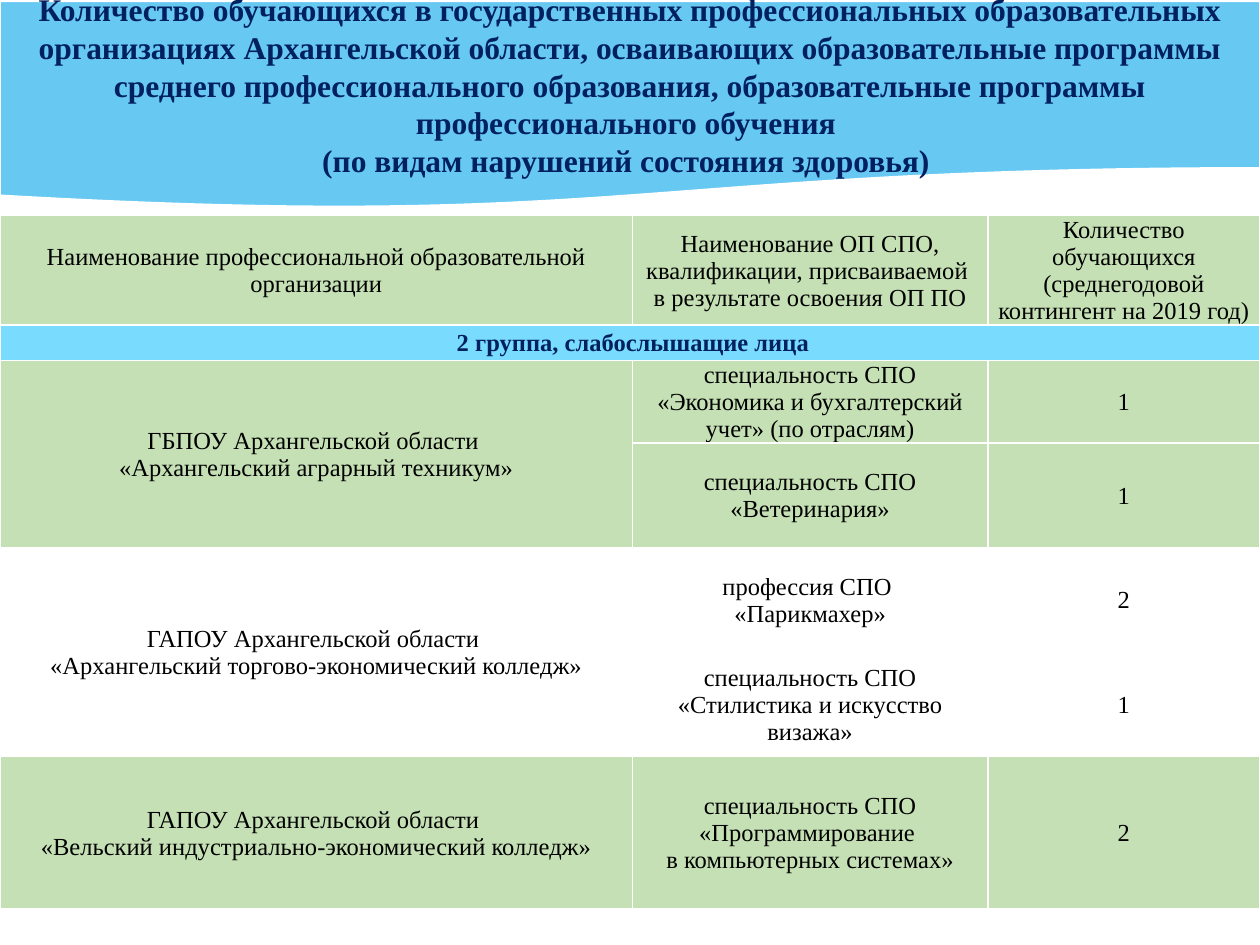
from dataclasses import dataclass

import pptx
import pptx.dml.color
import pptx.enum.shapes
import pptx.enum.text
import pptx.oxml
import pptx.oxml.ns
import pptx.presentation
import pptx.slide
import pptx.table
import pptx.text.text
import pptx.util

Inches = pptx.util.Inches
Pt = pptx.util.Pt


@dataclass(frozen=True)
class Theme:
    font: str = "Times New Roman"
    title_size: int = 18
    table_size: int = 14
    navy: str = "002060"
    black: str = "000000"
    white: str = "FFFFFF"
    green: str = "C5E0B4"
    group_blue: str = "79DCFF"
    band_blue: str = "67C8F2"


@dataclass(frozen=True)
class Programme:
    name: str
    students: int


@dataclass(frozen=True)
class College:
    name: str
    fill: str
    programmes: tuple[Programme, ...]


THEME = Theme()
COLUMN_WIDTHS = (5.02, 2.82, 2.16)
ROW_HEIGHTS = (0.83, 0.28, 0.57, 0.83, 0.83, 0.83, 1.21)
TITLE = (
    "Количество обучающихся в государственных профессиональных образовательных "
    "организациях Архангельской области, осваивающих образовательные программы "
    "среднего профессионального образования, образовательные программы "
    "профессионального обучения \n"
    "(по видам нарушений состояния здоровья) "
)
HEADERS = (
    "Наименование профессиональной образовательной организации",
    "Наименование ОП СПО, квалификации, присваиваемой \nв результате освоения ОП ПО",
    "Количество обучающихся (среднегодовой контингент на 2019 год)",
)
GROUP = " 2 группа, слабослышащие лица"
COLLEGES = (
    College(
        "ГБПОУ Архангельской области \n«Архангельский аграрный техникум»",
        THEME.green,
        (
            Programme("специальность СПО\n«Экономика и бухгалтерский учет» (по отраслям)", 1),
            Programme("специальность СПО\n«Ветеринария»", 1),
        ),
    ),
    College(
        "ГАПОУ Архангельской области \n«Архангельский торгово-экономический колледж»",
        THEME.white,
        (
            Programme("профессия СПО \n«Парикмахер»", 2),
            Programme("специальность СПО\n«Стилистика и искусство визажа»", 1),
        ),
    ),
    College(
        "ГАПОУ Архангельской области \n«Вельский индустриально-экономический колледж»",
        THEME.green,
        (Programme("специальность СПО\n«Программирование \nв компьютерных системах»", 2),),
    ),
)


def color(value: str) -> pptx.dml.color.RGBColor:
    return pptx.dml.color.RGBColor.from_string(value)


def write_text(
    frame: pptx.text.text.TextFrame, text: str, *, size: int, ink: str, bold: bool = False
) -> None:
    """Write each line of the text as a centred paragraph."""
    frame.text = text
    for para in frame.paragraphs:
        para.alignment = pptx.enum.text.PP_ALIGN.CENTER
        for span in para.runs:
            span.font.name = THEME.font
            span.font.size = Pt(size)
            span.font.bold = bold
            span.font.color.rgb = color(ink)


def add_borders(cell: pptx.table._Cell) -> None:
    """Put a thin white line on all four sides, ahead of the cell's fill."""
    properties = cell._tc.get_or_add_tcPr()
    for position, side in enumerate(("lnL", "lnR", "lnT", "lnB")):
        border = pptx.oxml.parse_xml(
            f'<a:{side} {pptx.oxml.ns.nsdecls("a")} w="{Pt(1)}"><a:solidFill>'
            f'<a:srgbClr val="{THEME.white}"/></a:solidFill></a:{side}>'
        )
        properties.insert(position, border)


def fill_cell(
    cell: pptx.table._Cell, text: str, fill: str, *, ink: str = THEME.black, bold: bool = False
) -> None:
    write_text(cell.text_frame, text, size=THEME.table_size, ink=ink, bold=bold)
    cell.vertical_anchor = pptx.enum.text.MSO_ANCHOR.MIDDLE
    cell.margin_left = cell.margin_right = cell.margin_top = Inches(0.01)
    cell.margin_bottom = 0


def style_cell(cell: pptx.table._Cell, fill: str) -> None:
    cell.fill.solid()
    cell.fill.fore_color.rgb = color(fill)
    add_borders(cell)


def add_student_table(page: pptx.slide.Slide) -> None:
    table = page.shapes.add_table(
        len(ROW_HEIGHTS), len(COLUMN_WIDTHS),
        0, Inches(1.71), Inches(sum(COLUMN_WIDTHS)), Inches(sum(ROW_HEIGHTS)),
    ).table
    for column, width in zip(table.columns, COLUMN_WIDTHS):
        column.width = Inches(width)
    for row, height in zip(table.rows, ROW_HEIGHTS):
        row.height = Inches(height)

    row_fills = [THEME.green, THEME.group_blue]
    for column, header in enumerate(HEADERS):
        fill_cell(table.cell(0, column), header, THEME.green)
    table.cell(1, 0).merge(table.cell(1, 2))
    fill_cell(table.cell(1, 0), GROUP, THEME.group_blue, ink=THEME.navy, bold=True)

    for college in COLLEGES:
        first = len(row_fills)
        last = first + len(college.programmes) - 1
        if last > first:
            table.cell(first, 0).merge(table.cell(last, 0))
        fill_cell(table.cell(first, 0), college.name, college.fill)
        for row, programme in enumerate(college.programmes, first):
            fill_cell(table.cell(row, 1), programme.name, college.fill)
            fill_cell(table.cell(row, 2), str(programme.students), college.fill)
            row_fills.append(college.fill)

    for row, fill in zip(table.rows, row_fills):
        for cell in row.cells:
            style_cell(cell, fill)


def add_title_band(page: pptx.slide.Slide) -> None:
    band = page.shapes.add_shape(
        pptx.enum.shapes.MSO_SHAPE.FLOWCHART_DOCUMENT, 0, Inches(0.01), Inches(10), Inches(1.65)
    )
    band.shadow.inherit = False
    band.fill.solid()
    band.fill.fore_color.rgb = color(THEME.band_blue)
    band.line.color.rgb = color(THEME.white)
    band.line.width = Pt(1)

    title = page.shapes.title
    title.left, title.top = 0, Inches(-0.08)
    title.width, title.height = Inches(10), Inches(1.5)
    frame = title.text_frame
    frame.word_wrap = True
    frame.auto_size = pptx.enum.text.MSO_AUTO_SIZE.NONE
    frame.vertical_anchor = pptx.enum.text.MSO_ANCHOR.MIDDLE
    frame.margin_top = frame.margin_bottom = 0
    write_text(frame, TITLE, size=THEME.title_size, ink=THEME.navy, bold=True)
    title._element.addprevious(band._element)


def main() -> None:
    deck = pptx.Presentation()
    deck.slide_width, deck.slide_height = Inches(10), Inches(7.5)
    page = deck.slides.add_slide(deck.slide_layouts.get_by_name("Title Only"))
    add_student_table(page)
    add_title_band(page)
    deck.save("out.pptx")


if __name__ == "__main__":
    main()
